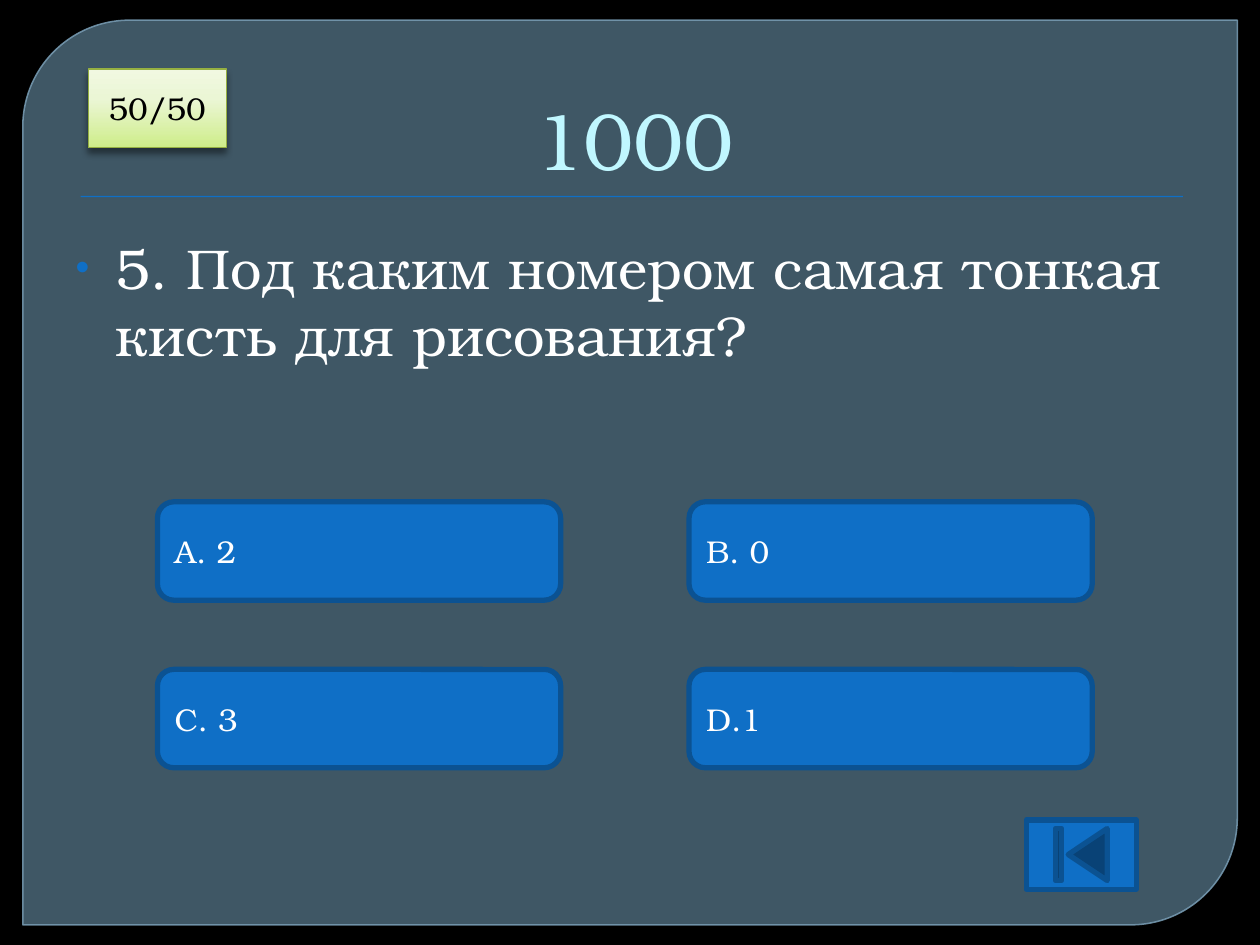
from copy import deepcopy

from lxml.etree import SubElement
from pptx import Presentation
from pptx.dml.color import RGBColor
from pptx.enum.shapes import MSO_SHAPE
from pptx.enum.text import MSO_ANCHOR, MSO_AUTO_SIZE, PP_ALIGN
from pptx.oxml.ns import qn
from pptx.util import Pt

COLORS = {
    "black": "000000",
    "white": "FFFFFF",
    "panel": "61869C",
    "panel_edge": "779BB2",
    "blue": "0F6FC6",
    "dark_blue": "0B5292",
    "title": "C0F7FF",
    "badge_edge": "96B042",
}
BADGE_STOPS = [(0, "CEED89"), (0.62, "EBF6D5"), (1, "F1F8E1")]
FONT = "TeX Gyre Bonum"


def rgb(name):
    return RGBColor.from_string(COLORS[name])


def write_text(frame, text, size=18, color="white", align=PP_ALIGN.LEFT,
               anchor=MSO_ANCHOR.MIDDLE):
    frame.word_wrap = True
    frame.auto_size = MSO_AUTO_SIZE.NONE
    frame.vertical_anchor = anchor
    paragraph = frame.paragraphs[0]
    paragraph.alignment = align
    paragraph.space_before = Pt(0)
    run = paragraph.add_run()
    run.text = text
    run.font.name = FONT
    run.font.size = Pt(size)
    run.font.color.rgb = rgb(color)
    return paragraph


def set_opacity(fill_parent, percent):
    color = fill_parent.find(f"{qn('a:solidFill')}/{qn('a:srgbClr')}")
    SubElement(color, qn("a:alpha"), val=str(percent * 1000))


def set_indent(paragraph, left, first=0):
    properties = paragraph._p.get_or_add_pPr()
    properties.set("marL", str(Pt(left)))
    properties.set("indent", str(Pt(first)))
    return properties


class QuizSlide:
    def __init__(self, deck):
        self.slide = deck.slides.add_slide(deck.slide_layouts[1])
        background = self.slide.background.fill
        background.solid()
        background.fore_color.rgb = rgb("black")

    def shape(self, kind, box, fill="blue", line="dark_blue", width=3):
        shape = self.slide.shapes.add_shape(kind, *map(Pt, box))
        shape.shadow.inherit = False
        shape.fill.solid()
        shape.fill.fore_color.rgb = rgb(fill)
        if line:
            shape.line.color.rgb = rgb(line)
            shape.line.width = Pt(width)
        else:
            shape.line.fill.background()
        return shape

    def drop_shadow(self, shape, opacity, blur, distance):
        effects = shape.element.spPr.find(qn("a:effectLst"))
        shadow = SubElement(effects, qn("a:outerShdw"), blurRad=str(Pt(blur)),
                            dist=str(Pt(distance)), dir="5400000", rotWithShape="0")
        color = SubElement(shadow, qn("a:srgbClr"), val=COLORS["black"])
        SubElement(color, qn("a:alpha"), val=str(opacity * 1000))

    def panel(self, box):
        panel = self.shape(MSO_SHAPE.ROUND_2_DIAG_RECTANGLE, box, "panel", "panel_edge", 0.87)
        panel.adjustments[0] = 0.118
        panel.adjustments[1] = 0
        properties = panel.element.spPr
        set_opacity(properties, 65)
        set_opacity(properties.find(qn("a:ln")), 88)

    def rule(self, box):
        rule = self.shape(MSO_SHAPE.RECTANGLE, box, line=None)
        self.drop_shadow(rule, 75, 1, 1)

    def placeholder(self, index, box):
        """Place a template placeholder in front of the shapes drawn so far."""
        holder = self.slide.placeholders[index]
        holder.left, holder.top, holder.width, holder.height = map(Pt, box)
        holder.element.getparent().append(holder.element)
        return holder.text_frame

    def title(self, text, box):
        paragraph = write_text(self.placeholder(0, box), text, size=46, color="title",
                               align=PP_ALIGN.CENTER, anchor=MSO_ANCHOR.BOTTOM)
        set_indent(paragraph, 4.32)

    def question(self, text, box):
        paragraph = write_text(self.placeholder(1, box), text, size=32, anchor=MSO_ANCHOR.TOP)
        properties = set_indent(paragraph, 23.04, -23.04)
        bullet_color = SubElement(properties, qn("a:buClr"))
        SubElement(bullet_color, qn("a:srgbClr"), val=COLORS["blue"])
        SubElement(properties, qn("a:buSzPct"), val="70000")
        SubElement(properties, qn("a:buFont"), typeface="Arial")
        SubElement(properties, qn("a:buChar"), char="•")

    def answer(self, text, box):
        answer = self.shape(MSO_SHAPE.ROUNDED_RECTANGLE, box)
        write_text(answer.text_frame, text)

    def badge(self, text, box):
        badge = self.shape(MSO_SHAPE.ACTION_BUTTON_CUSTOM, box, line="badge_edge", width=0.75)
        badge.fill.gradient()
        badge.fill.gradient_angle = 90
        stop_list = badge.element.spPr.find(f"{qn('a:gradFill')}/{qn('a:gsLst')}")
        stop_list.append(deepcopy(stop_list[0]))
        for stop, (position, color) in zip(badge.fill.gradient_stops, BADGE_STOPS):
            stop.position = position
            stop.color.rgb = RGBColor.from_string(color)
        self.drop_shadow(badge, 43, 4, 3)
        write_text(badge.text_frame, text, color="black", align=PP_ALIGN.CENTER)

    def back_button(self, box):
        self.shape(MSO_SHAPE.ACTION_BUTTON_BEGINNING, box)


def main():
    deck = Presentation()
    deck.slide_width, deck.slide_height = Pt(720), Pt(540)
    quiz = QuizSlide(deck)
    quiz.panel((13, 11.5, 694, 517))
    quiz.rule((46, 112, 630, 0.72))
    quiz.title("1000", (36, 20, 648, 90))
    quiz.question("5. Под каким номером самая тонкая кисть для рисования?",
                  (36, 129.6, 648, 356.4))
    for position, text in enumerate(["A. 2", "B. 0", "C. 3", "D.1"]):
        row, column = divmod(position, 2)
        quiz.answer(text, (90 + 303.75 * column, 286.75 + 95.75 * row, 230.4, 56.2))
    quiz.badge("50/50", (50.5, 39.4, 78.75, 45))
    quiz.back_button((586.5, 468.5, 62.75, 39.6))
    deck.save("out.pptx")


if __name__ == "__main__":
    main()
